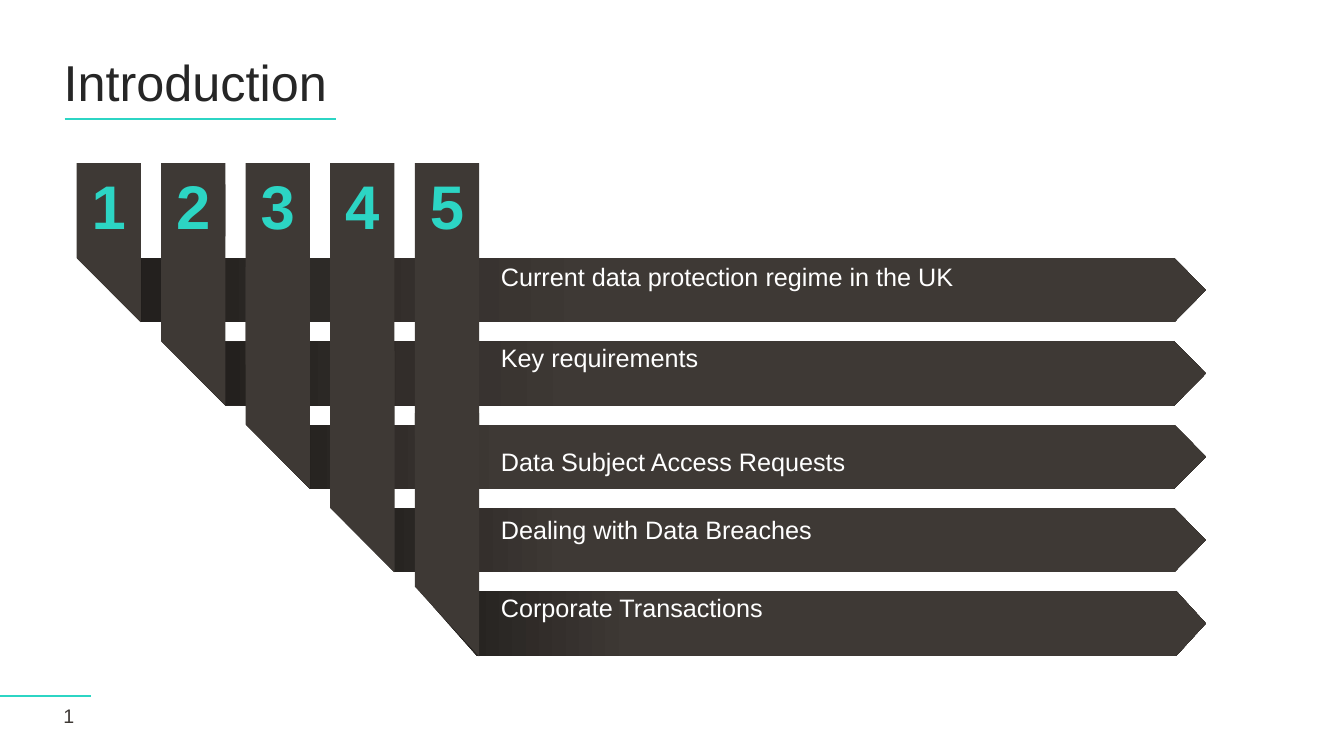
from copy import deepcopy

from pptx import Presentation
from pptx.dml.color import RGBColor
from pptx.enum.shapes import MSO_CONNECTOR, MSO_SHAPE
from pptx.enum.text import MSO_ANCHOR, MSO_AUTO_SIZE, PP_ALIGN
from pptx.oxml import parse_xml
from pptx.oxml.ns import nsdecls
from pptx.util import Cm, Pt

COLORS = {name: RGBColor.from_string(value) for name, value in {
    "accent": "2CD5C4",
    "bar": "3E3935",
    "shade": "1F1C1A",
    "title": "262626",
    "white": "FFFFFF",
}.items()}


def format_text(sp, text, size, color, bold=False, align=PP_ALIGN.LEFT,
                anchor=MSO_ANCHOR.MIDDLE):
    tf = sp.text_frame
    tf.text = text
    for name, value in {"word_wrap": True, "auto_size": MSO_AUTO_SIZE.NONE,
                        "vertical_anchor": anchor}.items():
        setattr(tf, name, value)
    p = tf.paragraphs[0]
    p.alignment = align
    r = p.runs[0]
    for name, value in {"name": "Arial", "size": Pt(size), "bold": bold}.items():
        setattr(r.font, name, value)
    r.font.color.rgb = COLORS[color]
    return p


def add_outline(shapes, points):
    points = [(Cm(x), Cm(y)) for x, y in points]
    builder = shapes.build_freeform(*points[0])
    builder.add_line_segments(points[1:], close=True)
    sp = builder.convert_to_shape()
    sp.shadow.inherit = False
    sp.line.fill.background()
    return sp


prs = Presentation()
prs.slide_width, prs.slide_height = Cm(33.86), Cm(19.05)
s = prs.slides.add_slide(prs.slide_layouts[5])

title = s.shapes.title
title.left, title.top, title.width, title.height = Cm(1.35), Cm(1.02), Cm(31.09), Cm(2.24)
format_text(title, "Introduction", 36, "title").line_spacing = 0.9

for x1, x2, y in [(1.63, 8.46, 3), (0, 2.29, 17.53)]:
    rule = s.shapes.add_connector(MSO_CONNECTOR.STRAIGHT, Cm(x1), Cm(y), Cm(x2), Cm(y))
    rule.line.color.rgb = COLORS["accent"]
    rule.line.width = Pt(1.5)
    rule._element.spPr.append(parse_xml(f"<a:effectLst {nsdecls('a')}/>"))

number = s.shapes.add_textbox(Cm(1.35), Cm(17.73), Cm(1.45), Cm(0.61))
p = format_text(number, "2", 14, "bar")
r = p.runs[0]._r
field = parse_xml(f'<a:fld {nsdecls("a")} id="{{B6F15528-21DE-4FAA-801E-634DDDAF4B2B}}" '
                  'type="slidenum"/>')
r.addprevious(field)
field.extend(list(r))
r.getparent().remove(r)

BAND = 1.62
COLUMN_TOP = 4.11
TIP = 30.38

topics = [
    ("Current data protection regime in the UK", 6.45, 0.46, 4.11, 0, 0),
    ("Key requirements", 8.51, 0.4, 4.65, 1.85, 0),
    ("Data Subject Access Requests", 11.13, 0.27, 6.73, 5.08, 0),
    ("Dealing with Data Breaches", 12.83, 0.27, 8.84, 6.05, 0),
    ("Corporate Transactions", 14.81, 0.27, 10.41, 6.88, 0.12),
]

for i, (topic, label_top, stop, fold_top, stem, inset) in enumerate(topics):
    group = s.shapes.add_group_shape()
    left = 1.93 + 2.13 * i
    right = left + BAND
    top = 6.5 + 2.1 * i
    bottom = top + BAND
    shoulder = TIP - 0.8 + inset / 2

    arrow = add_outline(group.shapes, [
        (left + inset, top), (shoulder, top), (TIP, top + BAND / 2),
        (shoulder, bottom), (right - inset / 2, bottom)])
    arrow.fill.gradient()
    arrow.fill.gradient_angle = 0
    stops = arrow.fill.gradient_stops
    for gs, color, position in zip(stops, ("shade", "bar"), (0, stop)):
        gs.color.rgb = COLORS[color]
        gs.position = position
    last = stops[1]._gs
    last.addnext(deepcopy(last))
    arrow.fill.gradient_stops[2].position = 0.99

    column = add_outline(group.shapes, [
        (left, fold_top), (right, fold_top), (right, bottom + inset / 6),
        (left, top - inset)])
    column.fill.solid()
    column.fill.fore_color.rgb = COLORS["bar"]

    if stem:
        sp = group.shapes.add_shape(MSO_SHAPE.RECTANGLE, Cm(left), Cm(COLUMN_TOP),
                                    Cm(BAND), Cm(stem))
        sp.shadow.inherit = False
        sp.fill.solid()
        sp.fill.fore_color.rgb = COLORS["bar"]
        sp.line.fill.background()

    digit = group.shapes.add_textbox(Cm(left), Cm(4.09), Cm(BAND), Cm(2.13))
    format_text(digit, str(i + 1), 44, "accent", True, PP_ALIGN.CENTER)
    label = group.shapes.add_textbox(Cm(12.37), Cm(label_top), Cm(17.12), Cm(1.02))
    format_text(label, topic, 18, "white", anchor=MSO_ANCHOR.TOP)

prs.save("out.pptx")
